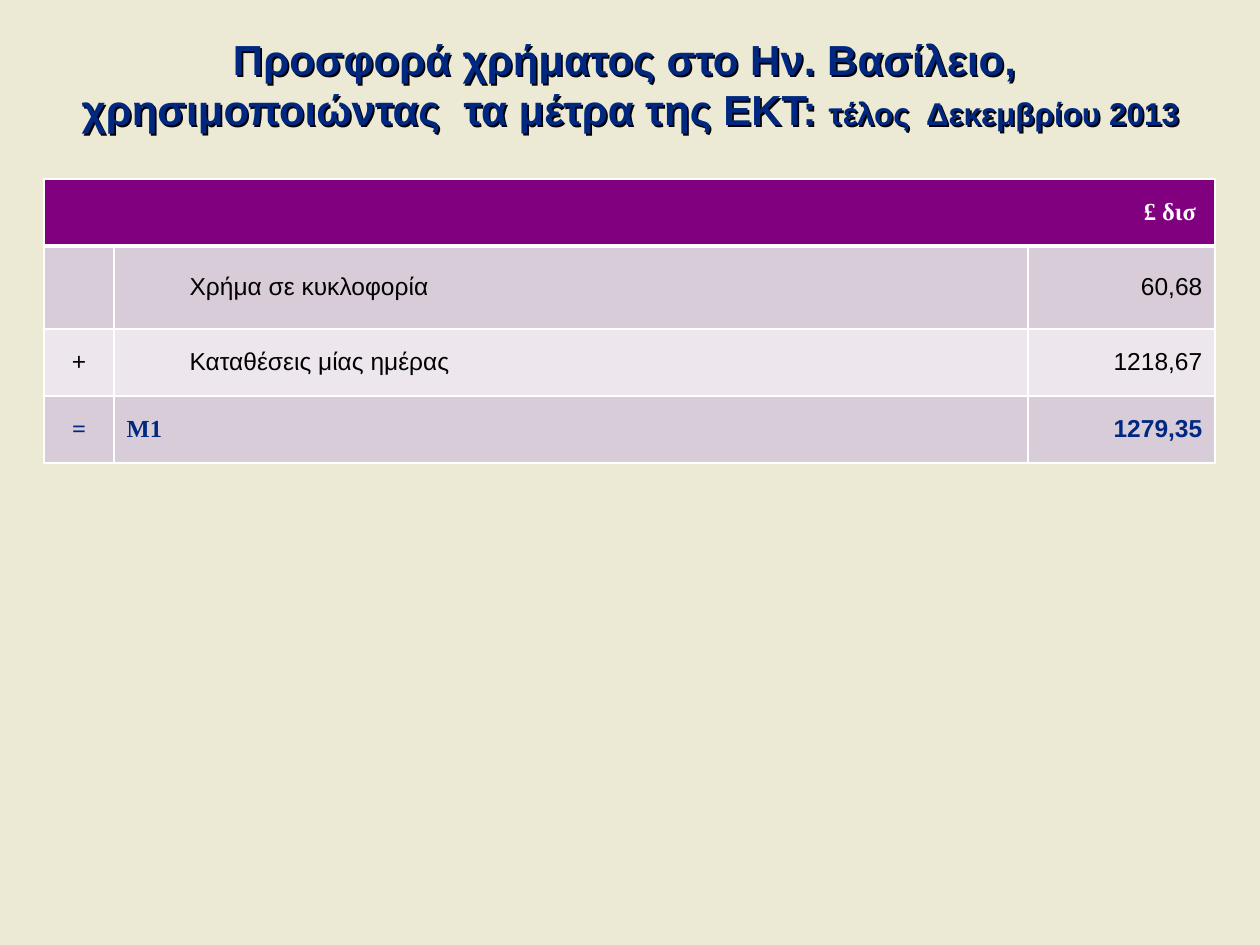
from lxml import etree
from pptx import Presentation
from pptx import util as u
from pptx.dml.color import RGBColor
from pptx.enum import text
from pptx.oxml import ns

PX = 914400 / 126
COLORS = {
    "background": "ECE9D5", "navy": "002880", "black": "000000", "white": "FFFFFF",
    "purple": "800080", "mauve": "D8CCD8", "pale": "EDE7ED",
}
LEFT, CENTER, RIGHT = (text.PP_ALIGN.LEFT, text.PP_ALIGN.CENTER, text.PP_ALIGN.RIGHT)
HEADER = {"name": "Times New Roman", "size": 14, "bold": True, "color": "white"}
PLAIN = {"name": "Arial", "size": 14, "bold": False, "color": "black"}
TOTAL = {"name": "Times New Roman", "size": 14, "bold": True, "color": "navy"}
TOTAL_VALUE = {**TOTAL, "name": "Arial"}
TITLE = {"name": "Arial", "size": 24, "bold": True, "color": "navy"}


def px(length):
    return u.Emu(round(length * PX))


def rgb(name):
    return RGBColor.from_string(COLORS[name])


def add_color(parent, name):
    fill = etree.SubElement(parent, ns.qn("a:solidFill"))
    etree.SubElement(fill, ns.qn("a:srgbClr"), val=COLORS[name])


class SlideBuilder:
    """Adds styled elements to one slide."""

    def __init__(self, deck):
        self.slide = deck.slides.add_slide(deck.slide_layouts[5])
        background = self.slide.background.fill
        background.solid()
        background.fore_color.rgb = rgb("background")

    def span(self, para, words, style):
        span = para.add_run()
        span.text = words
        values = {**style, "size": u.Pt(style["size"])}
        span.font.color.rgb = rgb(values.pop("color"))
        for key, value in values.items():
            setattr(span.font, key, value)

    def shadow(self, box):
        """Cast a sharp shadow from the text of an unfilled box."""
        box.fill.background()
        box.line.fill.background()
        effects = etree.SubElement(box._element.spPr, ns.qn("a:effectLst"))
        outer = etree.SubElement(effects, ns.qn("a:outerShdw"), dist="17961",
                                 dir="2700000", algn="ctr", rotWithShape="0")
        etree.SubElement(outer, ns.qn("a:srgbClr"), val=COLORS["black"])

    def title(self, left, top, width, height, lines, note):
        box = self.slide.shapes.title
        box.left, box.top, box.width, box.height = map(px, (left, top, width, height))
        self.shadow(box)
        frame = box.text_frame
        frame.word_wrap = True
        frame.auto_size = text.MSO_AUTO_SIZE.NONE
        frame.vertical_anchor = text.MSO_ANCHOR.TOP
        para = frame.paragraphs[0]
        para.alignment = CENTER
        for number, line in enumerate(lines):
            if number:
                para.add_line_break()
            self.span(para, line, TITLE)
        self.span(para, note, {**TITLE, "size": 18})

    def table(self, left, top, widths, heights):
        frame = self.slide.shapes.add_table(
            len(heights), len(widths), px(left), px(top),
            px(sum(widths)), px(sum(heights)))
        table = frame.table
        table.first_row = table.horz_banding = False
        for column, width in zip(table.columns, widths):
            column.width = px(width)
        for row, height in zip(table.rows, heights):
            row.height = px(height)
        return table

    def cell(self, cell, fill, words="", style=PLAIN, align=LEFT,
             inset=None, indent=0, thick=None):
        """Fill, border and write one cell; thick names the edge with a 3 pt line."""
        cell.fill.solid()
        cell.fill.fore_color.rgb = rgb(fill)
        cell.vertical_anchor = text.MSO_ANCHOR.MIDDLE
        if inset:
            for side in ("left", "top", "right", "bottom"):
                setattr(cell, f"margin_{side}", px(inset))
        properties = cell._tc.get_or_add_tcPr()
        for place, edge in enumerate(("lnL", "lnR", "lnT", "lnB")):
            weight = u.Pt(3 if edge == thick else 1)
            line = etree.Element(ns.qn(f"a:{edge}"), w=str(weight))
            add_color(line, "white")
            properties.insert(place, line)
        para = cell.text_frame.paragraphs[0]
        para.alignment = align
        if indent:
            para.level = 1
            settings = para._p.get_or_add_pPr()
            settings.set("marL", str(px(indent)))
            settings.set("indent", "0")
        if words:
            self.span(para, words, style)


def main():
    deck = Presentation()
    deck.slide_width, deck.slide_height = px(1260), px(945)
    page = SlideBuilder(deck)
    page.title(5, 27, 1251, 115,
               ["Προσφορά χρήματος στο Ην. Βασίλειο, ",
                "χρησιμοποιώντας  τα μέτρα της ΕΚΤ: "],
               "τέλος  Δεκεμβρίου 2013")

    table = page.table(44, 179, [70, 914, 187], [67, 83, 67, 67])
    table.cell(0, 0).merge(table.cell(0, 2))
    for column in range(3):
        words = "" if column else "£ δισ"
        page.cell(table.cell(0, column), "purple", words, HEADER, RIGHT,
                  inset=19, thick="lnB")

    rows = [
        ("", "Χρήμα σε κυκλοφορία", "60,68", "mauve", PLAIN, PLAIN, 63),
        ("+", "Καταθέσεις μίας ημέρας", "1218,67", "pale", PLAIN, PLAIN, 63),
        ("=", "Μ1", "1279,35", "mauve", TOTAL, TOTAL_VALUE, 0),
    ]
    for number, (sign, label, value, fill, style, value_style, indent) in enumerate(rows, 1):
        thick = "lnT" if number == 1 else None
        sign_cell, label_cell, value_cell = table.rows[number].cells
        page.cell(sign_cell, fill, sign, style, CENTER, inset=19, thick=thick)
        page.cell(label_cell, fill, label, style, indent=indent, thick=thick)
        page.cell(value_cell, fill, value, value_style, RIGHT, thick=thick)

    deck.save("out.pptx")


if __name__ == "__main__":
    main()
